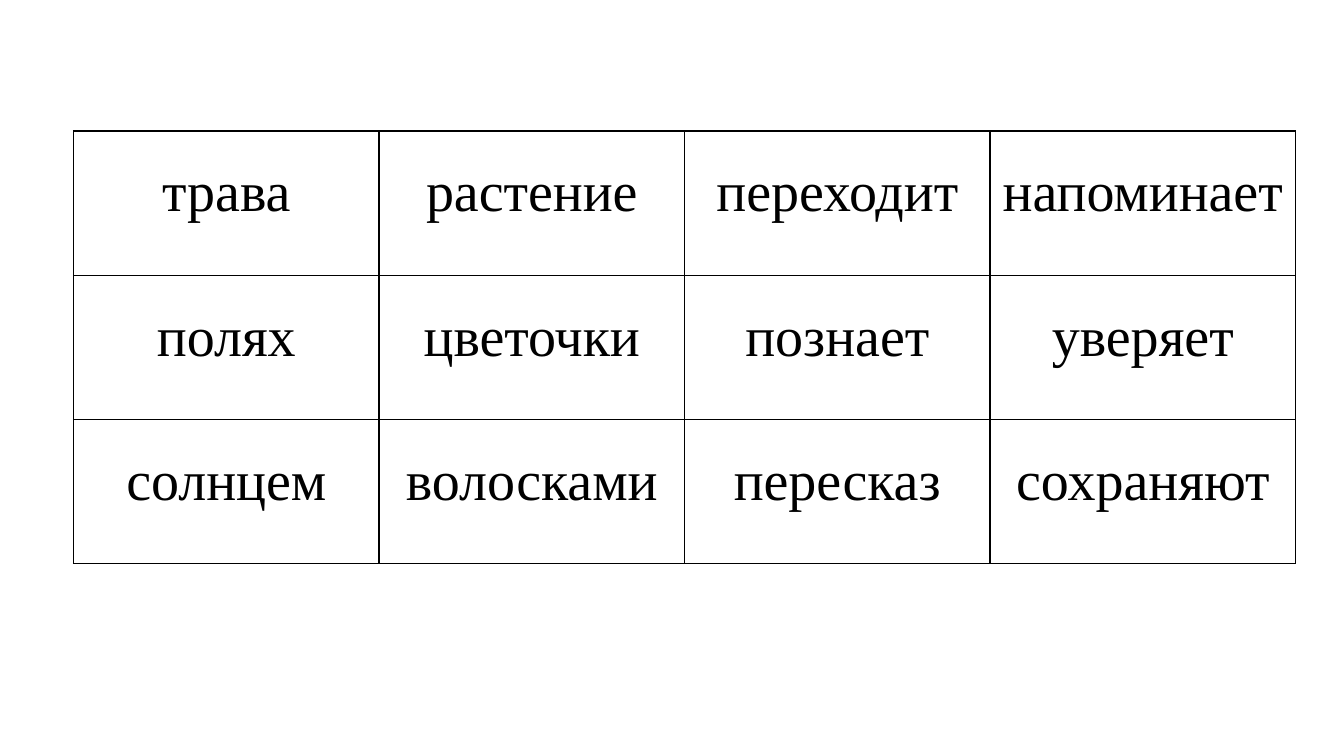
"""Build a slide with a grid of words in a bordered table."""
from lxml.etree import SubElement
from pptx import Presentation
from pptx.dml.color import RGBColor
from pptx.enum.text import MSO_ANCHOR, PP_ALIGN
from pptx.oxml.ns import qn
from pptx.util import Inches, Pt

COLORS = {"ink": "000000", "paper": "FFFFFF"}
FONT = "Times New Roman"
WORDS = [
    ["трава", "растение", "переходит", "напоминает"],
    ["полях", "цветочки", "познает", "уверяет"],
    ["солнцем", "волосками", "пересказ", "сохраняют"],
]
COL_W, ROW_H = Inches(3.03), Inches(1.43)


def add_borders(cell):
    """Draw a thin solid line on each side of a cell."""
    tc_pr = cell._tc.get_or_add_tcPr()
    for side in ("lnL", "lnR", "lnT", "lnB"):
        ln = SubElement(tc_pr, qn(f"a:{side}"), w=str(Pt(1)))
        fill = SubElement(ln, qn("a:solidFill"))
        SubElement(fill, qn("a:srgbClr"), val=COLORS["ink"])


prs = Presentation()
prs.slide_width, prs.slide_height = Inches(13.33), Inches(7.5)
s = prs.slides.add_slide(prs.slide_layouts[6])
s.background.fill.solid()
s.background.fill.fore_color.rgb = RGBColor.from_string(COLORS["paper"])

rows, cols = len(WORDS), len(WORDS[0])
table = s.shapes.add_table(rows, cols, Inches(0.73), Inches(1.3),
                           cols * COL_W, rows * ROW_H).table
table.first_row = table.horz_banding = False
for col in table.columns:
    col.width = COL_W
for row, words in zip(table.rows, WORDS):
    row.height = ROW_H
    for cell, word in zip(row.cells, words):
        add_borders(cell)
        cell.fill.background()
        cell.margin_left = cell.margin_right = Inches(0.07)
        cell.margin_top = cell.margin_bottom = 0
        cell.vertical_anchor = MSO_ANCHOR.TOP
        p = cell.text_frame.paragraphs[0]
        p.alignment = PP_ALIGN.CENTER
        p.line_spacing = 1.5
        r = p.add_run()
        r.text = word
        r.font.name, r.font.size = FONT, Pt(40)
        r.font.color.rgb = RGBColor.from_string(COLORS["ink"])

prs.save("out.pptx")
